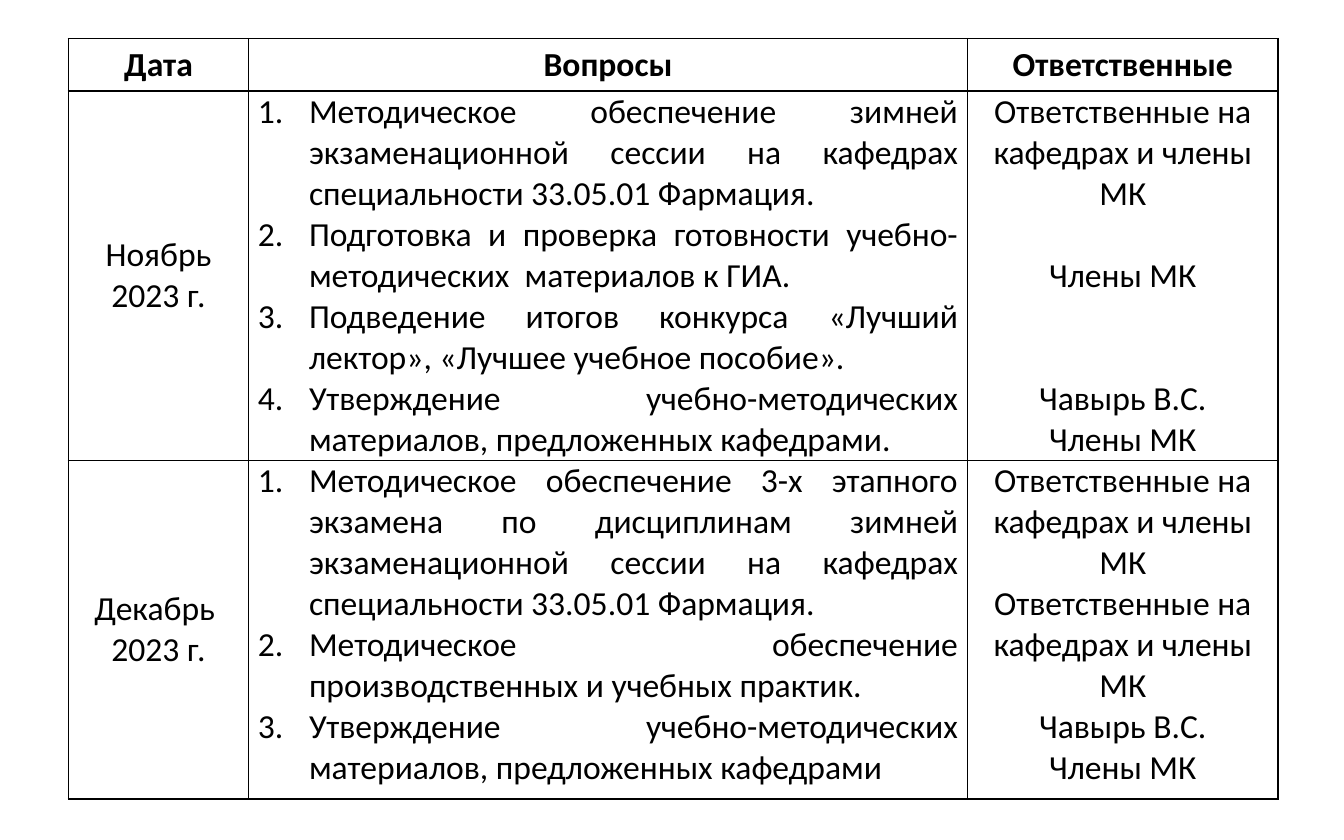
import dataclasses

import lxml.etree
import pptx
import pptx.dml.color
import pptx.enum.text
import pptx.oxml.ns
import pptx.util

ALIGN = pptx.enum.text.PP_ALIGN
ANCHOR = pptx.enum.text.MSO_ANCHOR


@dataclasses.dataclass(frozen=True)
class Theme:
    """Colours, type and line sizes of the slide."""
    ink: str = "000000"
    paper: str = "FFFFFF"
    font: str = "Calibri"
    size: int = 18
    line: int = 22
    rule: int = 1
    pad: float = 0.07
    hang: float = 0.38


THEME = Theme()
WIDE, HIGH = 10, 6.25
BOX = (0.051, 0.046, 0.9, 0.904)
COLS = (1.34, 5.35, 2.31)
ROWS = (0.39, 2.74, 2.52)
HEADS = ("Дата", "Вопросы", "Ответственные")
STAFF = "Ответственные на кафедрах и члены МК"
CHAIR = "Чавырь В.С."
TEAM = "Члены МК"
PLAN = (
    (
        ("Ноябрь", "2023 г."),
        (
            "Методическое обеспечение зимней экзаменационной сессии на кафедрах "
            "специальности 33.05.01 Фармация.",
            "Подготовка и проверка готовности учебно-методических  материалов к ГИА.",
            "Подведение итогов конкурса «Лучший лектор», «Лучшее учебное пособие».",
            "Утверждение учебно-методических материалов, предложенных кафедрами.",
        ),
        ((STAFF, 0), (TEAM, 1), (CHAIR, 2), (TEAM, 0)),
    ),
    (
        ("Декабрь ", "2023 г."),
        (
            "Методическое обеспечение 3-х этапного экзамена по дисциплинам зимней "
            "экзаменационной сессии на кафедрах специальности 33.05.01 Фармация.",
            "Методическое обеспечение производственных и учебных практик.",
            "Утверждение учебно-методических материалов, предложенных кафедрами",
        ),
        ((STAFF, 0), (STAFF, 0), (CHAIR, 0), (TEAM, 0)),
    ),
)


def node(root, tag, **attrs):
    """Add a drawing element to the root and return it."""
    return lxml.etree.SubElement(root, pptx.oxml.ns.qn(tag), attrs)


def write(para, text, bold=False, align=ALIGN.CENTER, gap=0, num=False):
    """Put formatted text in a paragraph, after a gap of whole lines."""
    para.alignment = align
    para.space_before = pptx.util.Pt(gap * THEME.line)
    run = para.add_run()
    run.text = text
    run.font.name = THEME.font
    run.font.size = pptx.util.Pt(THEME.size)
    run.font.bold = bold
    run.font.color.rgb = pptx.dml.color.RGBColor.from_string(THEME.ink)
    if num:
        props = para._p.get_or_add_pPr()
        hang = pptx.util.Inches(THEME.hang)
        props.set("marL", str(hang))
        props.set("indent", str(-hang))
        node(props, "a:buFont", typeface="+mj-lt")
        node(props, "a:buAutoNum", type="arabicPeriod")


def frame(cell):
    """Give a cell its fill, margins and four borders."""
    cell.fill.solid()
    cell.fill.fore_color.rgb = pptx.dml.color.RGBColor.from_string(THEME.paper)
    cell.margin_left = cell.margin_right = pptx.util.Inches(THEME.pad)
    cell.margin_top = cell.margin_bottom = 0
    props = cell._tc.get_or_add_tcPr()
    for spot, side in enumerate("LRTB"):
        edge = node(props, f"a:ln{side}", w=str(pptx.util.Pt(THEME.rule)))
        node(node(edge, "a:solidFill"), "a:srgbClr", val=THEME.ink)
        props.insert(spot, edge)


def fill(cell, items, anchor=ANCHOR.MIDDLE):
    """Write a list of text and format pairs into a framed cell."""
    frame(cell)
    cell.vertical_anchor = anchor
    body = cell.text_frame
    for spot, (text, form) in enumerate(items):
        para = body.add_paragraph() if spot else body.paragraphs[0]
        write(para, text, **form)


def grid(slide, box):
    """Place the meeting plan table in a box of slide shares."""
    left, top, width, height = (
        pptx.util.Inches(share * side) for share, side in zip(box, (WIDE, HIGH) * 2)
    )
    table = slide.shapes.add_table(len(ROWS), len(COLS), left, top, width, height).table
    table.first_row = table.horz_banding = False
    for col, share in zip(table.columns, COLS):
        col.width = int(width * share / sum(COLS))
    for row, share in zip(table.rows, ROWS):
        row.height = int(height * share / sum(ROWS))
    for col, head in enumerate(HEADS):
        fill(table.cell(0, col), [(head, {"bold": True})])
    for row, (date, topics, people) in enumerate(PLAN, 1):
        fill(table.cell(row, 0), [(text, {}) for text in date])
        form = {"align": ALIGN.JUSTIFY, "num": True}
        fill(table.cell(row, 1), [(text, form) for text in topics], ANCHOR.TOP)
        fill(table.cell(row, 2), [(name, {"gap": gap}) for name, gap in people], ANCHOR.TOP)


def main():
    """Build and save the slide."""
    deck = pptx.Presentation()
    deck.slide_width = pptx.util.Inches(WIDE)
    deck.slide_height = pptx.util.Inches(HIGH)
    grid(deck.slides.add_slide(deck.slide_layouts[6]), BOX)
    deck.save("out.pptx")


if __name__ == "__main__":
    main()
